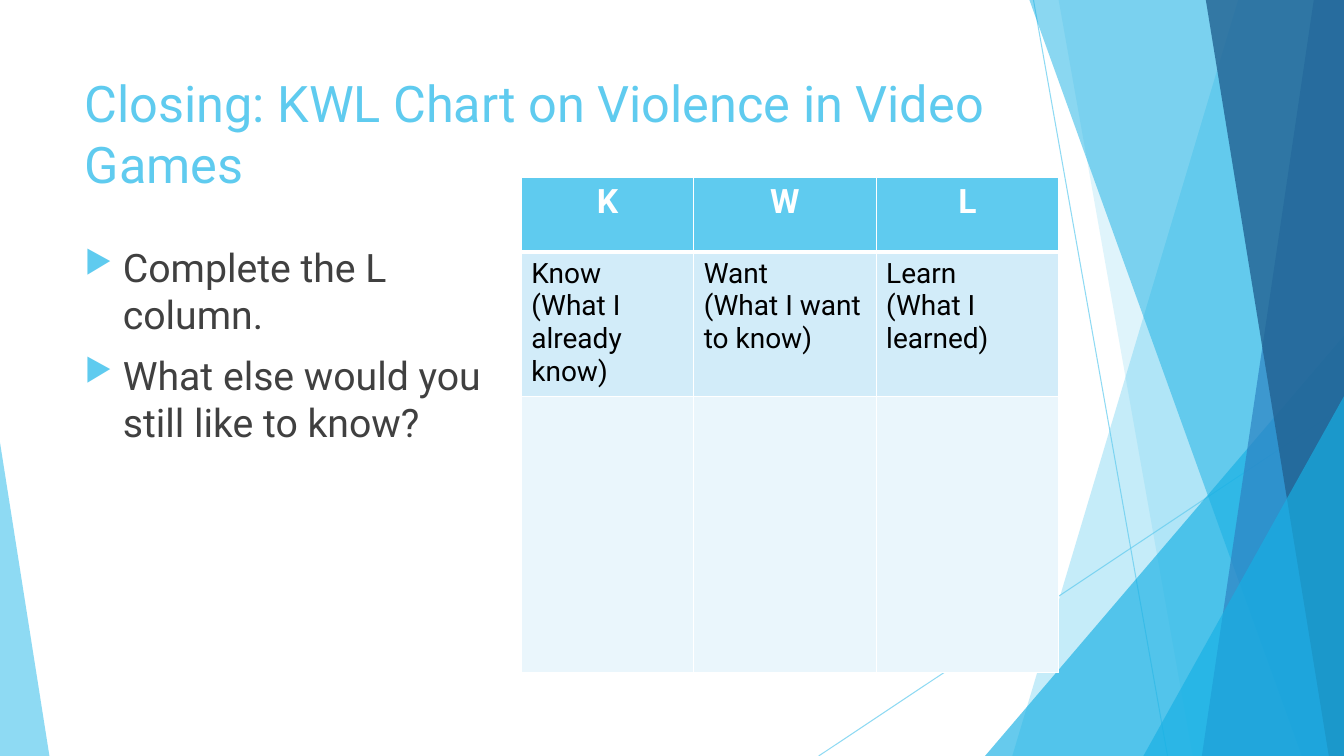
from dataclasses import dataclass
from typing import Any, NamedTuple

from lxml.etree import SubElement as Sub
from pptx import Presentation
from pptx.dml.color import RGBColor as Rgb
from pptx.enum.shapes import MSO_CONNECTOR as Link, MSO_SHAPE as Kind
from pptx.enum.text import MSO_ANCHOR as Anchor, PP_ALIGN as Align
from pptx.oxml.ns import qn
from pptx.util import Inches, Pt


@dataclass(frozen=True)
class Theme:
    font: str = "Roboto"
    sky: str = "5FCBEF"
    aqua: str = "17B0E4"
    blue: str = "2E83C3"
    navy: str = "226292"
    gray: str = "404040"
    black: str = "000000"
    white: str = "FFFFFF"
    pale: str = "D2ECF9"
    faint: str = "EAF6FC"
    title: int = 36
    body: int = 28
    head: int = 24
    cell: int = 20


class Ray(NamedTuple):
    start: tuple[float, float]
    end: tuple[float, float]


class Facet(NamedTuple):
    points: list[tuple[float, float]]
    color: str
    alpha: int


class Wedge(NamedTuple):
    box: tuple[float, float, float, float]
    tip: float
    color: str
    alpha: int


class Band(NamedTuple):
    height: float
    texts: list[str]
    fill: str
    size: int
    color: str
    bold: bool
    align: Align


T = Theme()
WIDE, HIGH = 13.33, 7.5


def slab(top: float, foot: float, color: str, alpha: int) -> Facet:
    return Facet([(top, 0), (WIDE, 0), (WIDE, HIGH), (foot, HIGH)], color, alpha)


RAYS = [Ray((10.25, 0), (11.58, HIGH)), Ray((WIDE, 4.03), (8.12, HIGH))]
DECOR = [
    slab(12.28, 10.04, T.sky, 36),
    slab(10.5, 11.83, T.sky, 20),
    Wedge((9.77, 3.33, 3.56, 4.17), 1, T.aqua, 66),
    slab(10.21, 12.91, T.aqua, 50),
    slab(13.03, 11.92, T.blue, 70),
    slab(11.96, 13.18, T.navy, 80),
    Wedge((11.34, 3.93, 1.99, 3.57), 1, T.aqua, 66),
    Wedge((0, 4.39, 0.49, 3.11), 0, T.sky, 70),
]
POINTS = ["Complete the L column.", "What else would you still like to know?"]
COLS = [1.71, 1.81, 1.81]
BANDS = [
    Band(0.74, ["K", "W", "L"], T.sky, T.head, T.white, True, Align.CENTER),
    Band(1.41, ["Know\n(What I already know)", "Want\n(What I want to know)",
                "Learn\n(What I learned)"],
         T.pale, T.cell, T.black, False, Align.LEFT),
    Band(2.74, ["", "", ""], T.faint, T.cell, T.black, False, Align.LEFT),
]


def put(item: Any, form: dict[str, Any]) -> None:
    for name, value in form.items():
        setattr(item, name, value)


def style(font: Any, size: int, color: str, bold: bool = False) -> None:
    put(font, {"name": T.font, "size": Pt(size), "bold": bold})
    font.color.rgb = Rgb.from_string(color)


def tint(fill: Any, color: str) -> None:
    fill.solid()
    fill.fore_color.rgb = Rgb.from_string(color)


def fade(part: Any, alpha: int) -> None:
    tone = next(part.iter(qn("a:srgbClr")))
    Sub(tone, qn("a:alpha"), val=str(alpha * 1000))


def draw_ray(shapes: Any, ray: Ray) -> None:
    ends = map(Inches, ray.start + ray.end)
    line = shapes.add_connector(Link.STRAIGHT, *ends)
    line.line.width = Pt(0.75)
    line.line.color.rgb = Rgb.from_string(T.sky)
    fade(line.element.spPr, 70)
    Sub(line.element.spPr, qn("a:effectLst"))


def draw_decor(shapes: Any, item: Facet | Wedge) -> None:
    if isinstance(item, Facet):
        dots = [(Inches(x), Inches(y)) for x, y in item.points]
        pen = shapes.build_freeform(*dots[0])
        pen.add_line_segments(dots[1:], close=True)
        shape = pen.convert_to_shape()
    else:
        shape = shapes.add_shape(Kind.ISOSCELES_TRIANGLE, *map(Inches, item.box))
        shape.adjustments[0] = item.tip
    shape.shadow.inherit = False
    shape.line.fill.background()
    tint(shape.fill, item.color)
    fade(shape.element.spPr, item.alpha)


def draw_title(title: Any, text: str) -> None:
    tree = title.element.getparent()
    tree.append(title.element)
    put(title, {"left": Inches(0.74), "top": Inches(0.67),
                "width": Inches(9.4), "height": Inches(1.44)})
    frame = title.text_frame
    put(frame, {"text": text, "word_wrap": True, "vertical_anchor": Anchor.TOP})
    para = frame.paragraphs[0]
    para.alignment = Align.LEFT
    style(para.runs[0].font, T.title, T.sky)


def draw_list(shapes: Any, texts: list[str]) -> None:
    box = shapes.add_textbox(*map(Inches, (0.74, 2.36, 4.58, 4.24)))
    frame = box.text_frame
    put(frame, {"text": "\n".join(texts), "word_wrap": True})
    for para in frame.paragraphs:
        para.space_before = Pt(10)
        style(para.runs[0].font, T.body, T.gray)
        props = para._p.get_or_add_pPr()
        props.set("marL", str(Inches(0.38)))
        props.set("indent", str(-Inches(0.38)))
        Sub(Sub(props, qn("a:buClr")), qn("a:srgbClr"), val=T.sky)
        Sub(props, qn("a:buSzPct"), val="80000")
        Sub(props, qn("a:buChar"), char="▶")


def edge(cell: Any, top: int, foot: int) -> None:
    props = cell._tc.get_or_add_tcPr()
    sides = {"L": 1, "R": 1, "T": top, "B": foot}
    for side, width in sides.items():
        line = Sub(props, qn(f"a:ln{side}"), w=str(Pt(width)))
        Sub(Sub(line, qn("a:solidFill")), qn("a:srgbClr"), val=T.white)


def draw_cell(cell: Any, band: Band, text: str) -> None:
    cell.text = text
    for para in cell.text_frame.paragraphs:
        para.alignment = band.align
        style(para.font, band.size, band.color, band.bold)
        for run in para.runs:
            style(run.font, band.size, band.color, band.bold)


def draw_table(shapes: Any) -> None:
    size = sum(COLS), sum(band.height for band in BANDS)
    frame = shapes.add_table(len(BANDS), len(COLS), *map(Inches, (5.17, 1.76, *size)))
    table = frame.table
    for col, width in zip(table.columns, COLS):
        col.width = Inches(width)
    for row, band in enumerate(BANDS):
        table.rows[row].height = Inches(band.height)
        for col, text in enumerate(band.texts):
            cell = table.cell(row, col)
            draw_cell(cell, band, text)
            edge(cell, 3 if row == 1 else 1, 3 if row == 0 else 1)
            tint(cell.fill, band.fill)


def main() -> None:
    deck = Presentation()
    put(deck, {"slide_width": Inches(WIDE), "slide_height": Inches(HIGH)})
    slide = deck.slides.add_slide(deck.slide_layouts[5])
    shapes = slide.shapes
    for ray in RAYS:
        draw_ray(shapes, ray)
    for item in DECOR:
        draw_decor(shapes, item)
    draw_title(shapes.title, "Closing: KWL Chart on Violence in Video Games")
    draw_list(shapes, POINTS)
    draw_table(shapes)
    deck.save("out.pptx")


if __name__ == "__main__":
    main()
